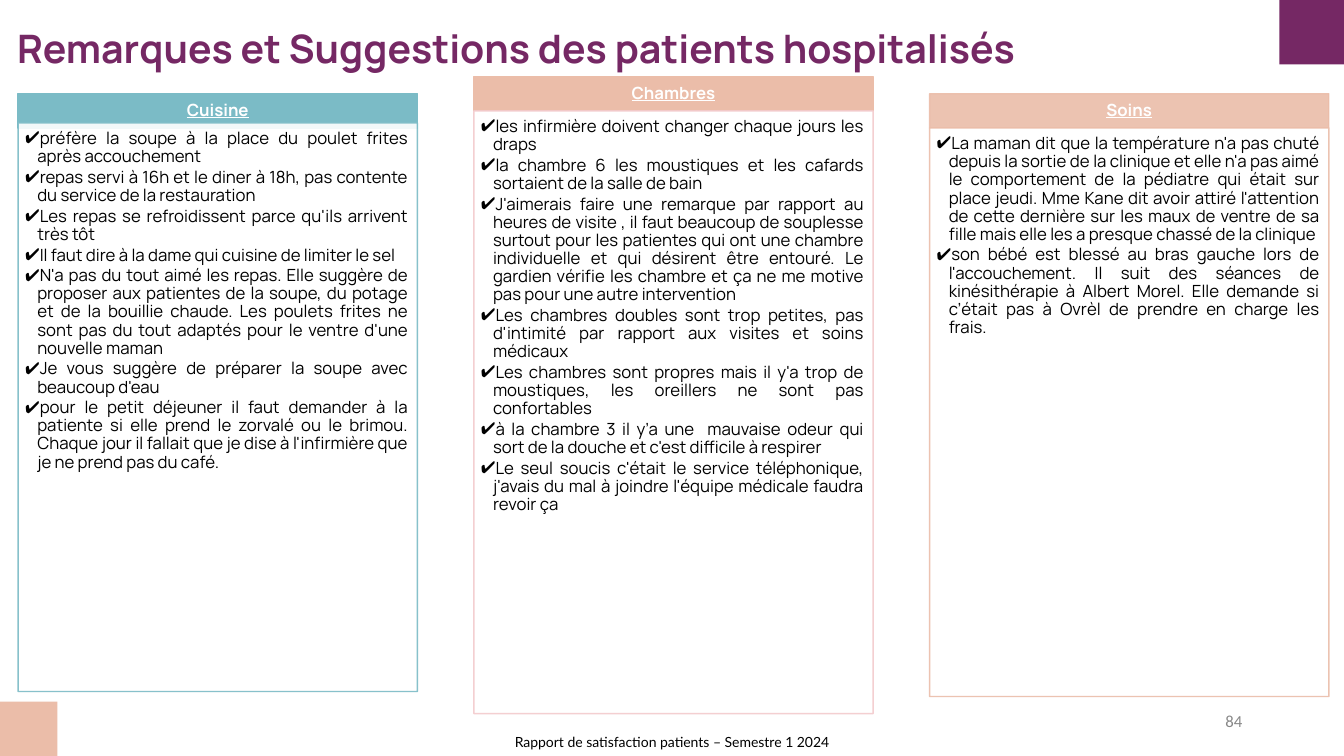
import pptx
import pptx.util
import pptx.dml.color
import pptx.enum.shapes
import pptx.enum.text
import pptx.oxml.ns
from lxml import etree

Inches, Pt = pptx.util.Inches, pptx.util.Pt
ALIGN = pptx.enum.text.PP_ALIGN
ANCHOR = pptx.enum.text.MSO_ANCHOR
qn = pptx.oxml.ns.qn

# Content
TITLE = "Remarques et Suggestions des patients hospitalisés"
FOOTER = "Rapport de satisfaction patients – Semestre 1 2024"
NUMBER = "84"

FOOD = [
    "préfère la soupe à la place du poulet frites après accouchement",
    "repas servi à 16h et le diner à 18h, pas contente du service de la restauration",
    "Les repas se refroidissent parce qu'ils arrivent très tôt",
    "Il faut dire à la dame qui cuisine de limiter le sel",
    "N'a pas du tout aimé les repas. Elle suggère de proposer aux patientes de la "
    "soupe, du potage et de la bouillie chaude. Les poulets frites ne sont pas du "
    "tout adaptés pour le ventre d'une nouvelle maman",
    "Je vous suggère de préparer la soupe avec beaucoup d'eau",
    "pour le petit déjeuner il faut demander à la patiente si elle prend le zorvalé "
    "ou le brimou. Chaque jour il fallait que je dise à l'infirmière que je ne prend "
    "pas du café.",
]
ROOMS = [
    "les infirmière doivent changer chaque jours les draps",
    "la chambre 6 les moustiques et les cafards sortaient de la salle de bain",
    "J'aimerais faire une remarque par rapport au heures de visite , il faut beaucoup "
    "de souplesse surtout pour les patientes qui ont une chambre individuelle et qui "
    "désirent être entouré. Le gardien vérifie les chambre et ça ne me motive pas pour "
    "une autre intervention",
    "Les chambres doubles sont trop petites, pas d'intimité par rapport aux visites et "
    "soins médicaux",
    "Les chambres sont propres mais il y'a trop de moustiques, les oreillers ne sont "
    "pas confortables",
    "à la chambre 3 il y’a une  mauvaise odeur qui sort de la douche et c'est difficile "
    "à respirer",
    "Le seul soucis c'était le service téléphonique, j'avais du mal à joindre l'équipe "
    "médicale faudra revoir ça",
]
CARE = [
    "La maman dit que la température n'a pas chuté depuis la sortie de la clinique et "
    "elle n'a pas aimé le comportement de la pédiatre qui était sur place jeudi. Mme "
    "Kane dit avoir attiré l'attention de cette dernière sur les maux de ventre de sa "
    "fille mais elle les a presque chassé de la clinique",
    "son bébé est blessé au bras gauche lors de l'accouchement. Il suit des séances de "
    "kinésithérapie à Albert Morel. Elle demande si c’était pas à Ovrèl de prendre en "
    "charge les frais.",
]

PLUM, PEACH, TEAL, PINK = "752864", "EBBDA9", "7BBBC6", "F3CACC"
WHITE, BLACK, GRAY = "FFFFFF", "000000", "888888"

# Heading, remarks, placeholder, head colour, head opacity, body line,
# head top, body top, body height
COLUMNS = [
    ("Cuisine", FOOD, 1, TEAL, 100, TEAL, 0.93, 1.22, 5.64),
    ("Chambres", ROOMS, 2, PEACH, 100, PINK, 0.76, 1.1, 5.98),
    ("Soins", CARE, 4, PEACH, 90, PEACH, 0.93, 1.27, 5.64),
]
LEFT, STEP, WIDE, HEAD = 0.18, 4.52, 3.96, 0.34


def color(code):
    return pptx.dml.color.RGBColor.from_string(code)


def place(shape, *box):
    shape.left, shape.top, shape.width, shape.height = map(Inches, box)


def paint(shape, fill, line=None, alpha=100):
    shape.fill.solid()
    shape.fill.fore_color.rgb = color(fill)
    if line:
        shape.line.color.rgb = color(line)
        shape.line.width = Pt(1)
    else:
        shape.line.fill.background()
    if alpha < 100:
        for tint in shape._element.spPr.iter(qn("a:srgbClr")):
            etree.SubElement(tint, qn("a:alpha")).set("val", str(alpha * 1000))


def frame(shape, anchor, *pads):
    area = shape.text_frame
    area.word_wrap = True
    area.auto_size = pptx.enum.text.MSO_AUTO_SIZE.NONE
    area.vertical_anchor = anchor
    (area.margin_left, area.margin_top,
     area.margin_right, area.margin_bottom) = map(Inches, pads)
    return area


def write(para, text, size, face, tint, align, bold=False, under=False):
    para.alignment = align
    run = para.add_run()
    run.text = text
    font = run.font
    font.size, font.name, font.bold = Pt(size), face, bold
    font.color.rgb = color(tint)
    if under:
        font.underline = True


def block(slide, box, fill, line=None, alpha=100):
    shape = slide.shapes.add_shape(
        pptx.enum.shapes.MSO_SHAPE.RECTANGLE, *map(Inches, box))
    shape.shadow.inherit = False
    paint(shape, fill, line, alpha)
    return shape


def label(slide, box, anchor, text, size, face, tint, align):
    area = frame(slide.shapes.add_textbox(*map(Inches, box)),
                 anchor, 0.1, 0.05, 0.1, 0.05)
    write(area.paragraphs[0], text, size, face, tint, align)


def tick(para):
    props = para._p.get_or_add_pPr()
    props.set("marL", str(Inches(0.12)))
    props.set("indent", str(Inches(-0.12)))
    tint = etree.SubElement(props, qn("a:buClr"))
    etree.SubElement(tint, qn("a:srgbClr")).set("val", BLACK)
    etree.SubElement(props, qn("a:buChar")).set("char", "✔")


def column(slide, left, row):
    name, notes, slot, tint, alpha, edge, top, start, high = row

    # Heading band
    head = block(slide, (left, top, WIDE, HEAD), tint, tint, alpha)
    para = frame(head, ANCHOR.MIDDLE, 0.09, 0.05, 0.09, 0.05).paragraphs[0]
    para.line_spacing = 0.9
    write(para, name, 12, "Manrope", WHITE, ALIGN.CENTER, True, True)

    # List of remarks, in front of its heading
    body = slide.placeholders[slot]
    place(body, left, start, WIDE, high)
    paint(body, WHITE, edge, 90)
    head._element.addnext(body._element)
    area = frame(body, ANCHOR.TOP, 0.07, 0.07, 0.09, 0.1)
    for i, note in enumerate(notes):
        para = area.add_paragraph() if i else area.paragraphs[0]
        para.level = 1
        tick(para)
        para.line_spacing = 0.9
        para.space_before = Pt(1.8 if i else 0)
        write(para, note, 12, "Manrope", BLACK, ALIGN.JUSTIFY)


def main():
    deck = pptx.Presentation()
    deck.slide_width, deck.slide_height = Inches(13.33), Inches(7.5)
    slide = deck.slides.add_slide(deck.slide_layouts[4])
    spare = slide.placeholders[3]._element
    spare.getparent().remove(spare)

    # Title and corner blocks
    title = slide.shapes.title
    place(title, 0.17, 0.24, 11.35, 0.47)
    area = frame(title, ANCHOR.MIDDLE, 0, 0, 0, 0)
    write(area.paragraphs[0], TITLE, 28, "Manrope", PLUM, ALIGN.LEFT, True)
    block(slide, (12.69, 0, 0.64, 0.64), PLUM)
    block(slide, (0, 6.96, 0.57, 0.54), PEACH)

    # Three columns
    for i, row in enumerate(COLUMNS):
        column(slide, LEFT + i * STEP, row)

    # Footer and page number
    label(slide, (3.33, 7.23, 6.67, 0.27), ANCHOR.TOP,
          FOOTER, 10, "Lato", BLACK, ALIGN.CENTER)
    label(slide, (9.42, 6.95, 3, 0.4), ANCHOR.MIDDLE,
          NUMBER, 12, "Calibri", GRAY, ALIGN.RIGHT)
    deck.save("out.pptx")


if __name__ == "__main__":
    main()
